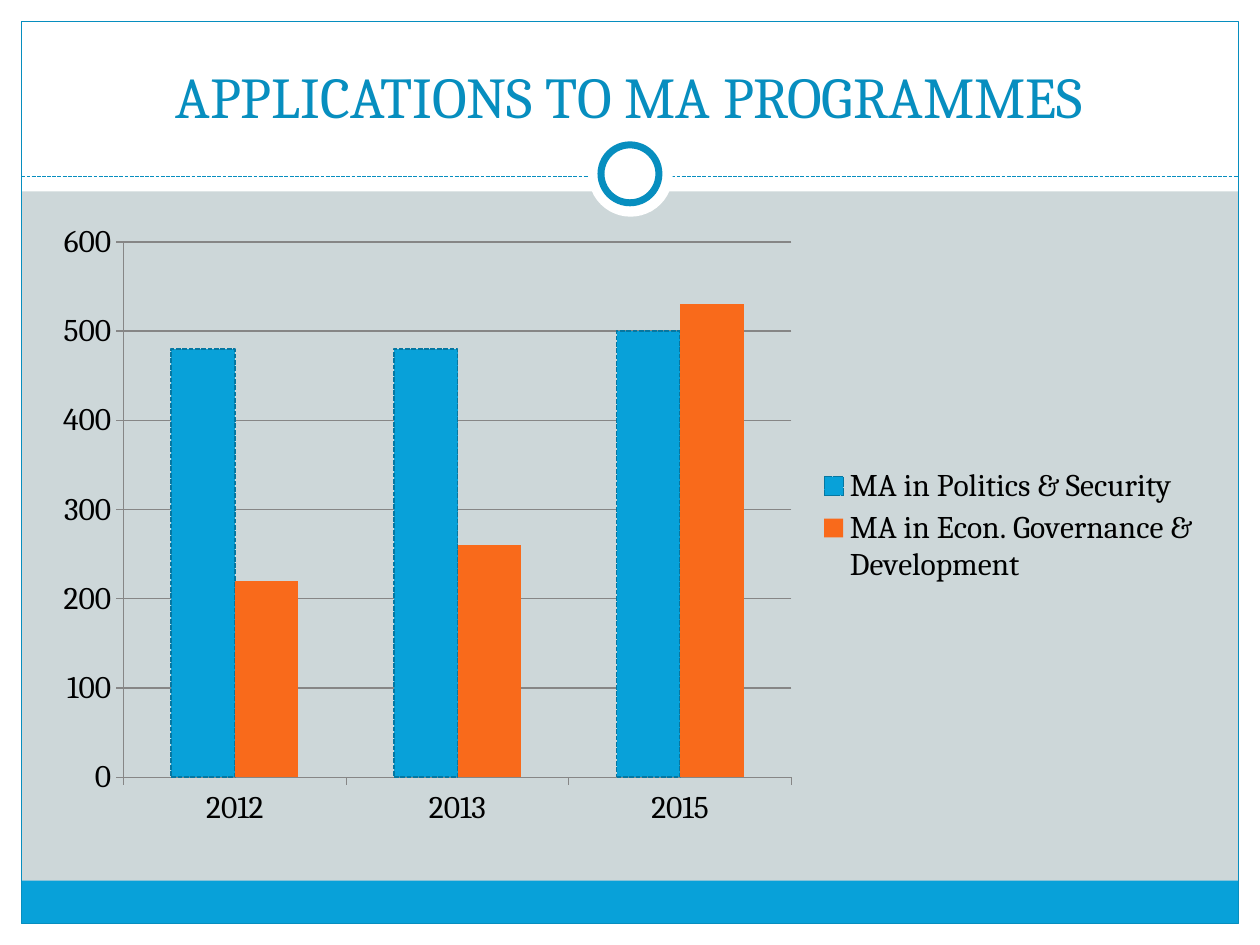
from lxml.etree import SubElement
from pptx import Presentation
from pptx.chart.data import CategoryChartData
from pptx.dml.color import RGBColor
from pptx.enum.chart import XL_CHART_TYPE, XL_LEGEND_POSITION, XL_TICK_MARK
from pptx.enum.dml import MSO_LINE
from pptx.enum.shapes import MSO_CONNECTOR, MSO_SHAPE
from pptx.enum.text import MSO_ANCHOR, PP_ALIGN
from pptx.oxml import parse_xml
from pptx.oxml.ns import nsdecls, qn
from pptx.util import Inches, Pt

COLORS = {
    "background": "CDD7D9",
    "white": "FFFFFF",
    "black": "000000",
    "blue": "08A1D9",
    "frame": "078EBF",
    "bar_edge": "0677A1",
    "orange": "F96A1B",
    "grid": "868686",
}


def color(name):
    return RGBColor.from_string(COLORS[name])


def place(parent, index, inner, **fractions):
    old = parent.find(qn("c:layout"))
    if old is not None:
        parent.remove(old)
    layout = parse_xml(f"<c:layout {nsdecls('c')}><c:manualLayout/></c:layout>")
    settings = {"layoutTarget": "inner"} if inner else {}
    settings |= {"xMode": "edge", "yMode": "edge"} | fractions
    for name, value in settings.items():
        SubElement(layout[0], qn(f"c:{name}")).set("val", str(value))
    parent.insert(index, layout)


class SlideBuilder:
    font = "Cambria"

    def __init__(self, page):
        self.page = page
        page.background.fill.solid()
        page.background.fill.fore_color.rgb = color("background")

    def style_line(self, line, name, width, dashed=False):
        line.color.rgb = color(name)
        line.width = Pt(width)
        if dashed:
            line.dash_style = MSO_LINE.SQUARE_DOT

    def shape(self, kind, bounds, fill=None, line=None, width=0.75):
        shape = self.page.shapes.add_shape(kind, *map(Inches, bounds))
        shape.shadow.inherit = False
        if fill:
            shape.fill.solid()
            shape.fill.fore_color.rgb = color(fill)
        else:
            shape.fill.background()
        if line:
            self.style_line(shape.line, line, width)
        else:
            shape.line.fill.background()

    def divider(self, left, right, top):
        line = self.page.shapes.add_connector(
            MSO_CONNECTOR.STRAIGHT, Inches(left), Inches(top), Inches(right), Inches(top))
        self.style_line(line.line, "frame", 0.75, dashed=True)
        SubElement(line._element.spPr, qn("a:effectLst"))

    def title(self, text, bounds):
        box = self.page.shapes.title
        box.left, box.top, box.width, box.height = map(Inches, bounds)
        self.page.shapes._spTree.append(box._element)
        frame = box.text_frame
        frame.text = text
        frame.vertical_anchor = MSO_ANCHOR.BOTTOM
        para = frame.paragraphs[0]
        para.alignment = PP_ALIGN.CENTER
        para.font.name = self.font
        para.font.size = Pt(33)
        para.font.color.rgb = color("frame")

    def column_chart(self, categories, series, fills, bounds):
        data = CategoryChartData()
        data.categories = categories
        for name, values in series.items():
            data.add_series(name, values)
        chart = self.page.shapes.add_chart(
            XL_CHART_TYPE.COLUMN_CLUSTERED, *map(Inches, bounds), data).chart
        chart.has_title = False
        chart.font.name = self.font
        chart.font.size = Pt(18)
        chart.font.color.rgb = color("black")

        plot = chart.plots[0]
        plot.gap_width = 150
        plot.overlap = 0
        plot.vary_by_categories = False
        for bars, fill in zip(plot.series, fills):
            bars.format.fill.solid()
            bars.format.fill.fore_color.rgb = color(fill)
        self.style_line(plot.series[0].format.line, "bar_edge", 0.9, dashed=True)

        for axis in (chart.category_axis, chart.value_axis):
            axis.major_tick_mark = XL_TICK_MARK.OUTSIDE
            axis.minor_tick_mark = XL_TICK_MARK.NONE
            self.style_line(axis.format.line, "grid", 0.75)
        scale = chart.value_axis
        scale.minimum_scale, scale.maximum_scale, scale.major_unit = 0, 600, 100
        scale.has_major_gridlines = True
        self.style_line(scale.major_gridlines.format.line, "grid", 0.75)

        chart.has_legend = True
        legend = chart.legend
        legend.position = XL_LEGEND_POSITION.RIGHT
        legend.include_in_layout = False
        place(chart._chartSpace.chart.plotArea, 0, True, x=0.07, y=0.05, w=0.57, h=0.85)
        place(legend._element, 1, False, x=0.66, y=0.4, w=0.33, h=0.2)


def main():
    deck = Presentation()
    deck.slide_width, deck.slide_height = Inches(10), Inches(7.5)
    slide = SlideBuilder(deck.slides.add_slide(deck.slide_layouts[5]))

    margin = 0.17
    inner_width, inner_height = 10 - 2 * margin, 7.5 - 2 * margin
    for bounds in (
        (0, 7.5 - margin, 10, margin),
        (0, 0, 10, 1.52),
        (0, 0, margin, 7.5),
        (10 - margin, 0, margin, 7.5),
    ):
        slide.shape(MSO_SHAPE.RECTANGLE, bounds, "white")
    slide.shape(MSO_SHAPE.RECTANGLE, (margin, 6.99, inner_width, 0.34), "blue")
    slide.shape(MSO_SHAPE.RECTANGLE, (margin, margin, inner_width, inner_height), line="frame")
    slide.divider(margin, 10 - margin, 1.4)
    slide.shape(MSO_SHAPE.OVAL, (4.67, 1.05, 0.67, 0.67), "white")
    slide.shape(MSO_SHAPE.OVAL, (4.77, 1.15, 0.46, 0.46), "white", "frame", 4)

    slide.title("APPLICATIONS TO MA PROGRAMMES", (0.33, 0.25, 9.33, 0.83))
    slide.column_chart(
        ["2012", "2013", "2015"],
        {
            "MA in Politics & Security": (480, 480, 500),
            "MA in Econ. Governance & Development": (220, 260, 530),
        },
        ("blue", "orange"),
        (0.33, 1.67, 9.3, 5),
    )
    deck.save("out.pptx")


if __name__ == "__main__":
    main()
